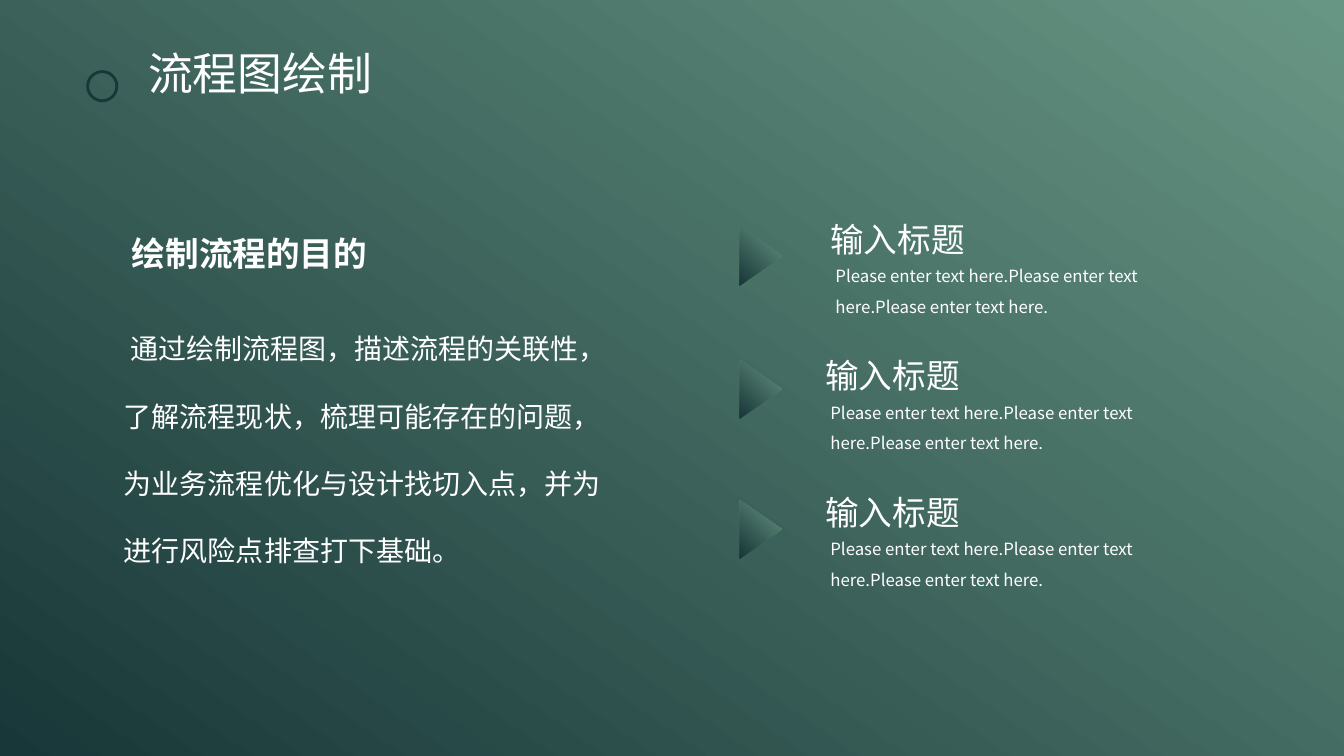
import pptx
import pptx.dml.color
import pptx.enum.shapes
import pptx.enum.text
import pptx.oxml
import pptx.oxml.ns
import pptx.util

SLIDE_WIDTH = pptx.util.Inches(13.33)
SLIDE_HEIGHT = pptx.util.Inches(7.5)
COLUMN = SLIDE_WIDTH / 160
ROW = SLIDE_HEIGHT / 90

WHITE = pptx.dml.color.RGBColor(0xFF, 0xFF, 0xFF)
SAGE = pptx.dml.color.RGBColor(0x68, 0x96, 0x84)
DEEP_GREEN = pptx.dml.color.RGBColor(0x18, 0x37, 0x38)
FONT = "Noto Sans CJK SC"

PURPOSE = (" 通过绘制流程图，描述流程的关联性，了解流程现状，梳理可能存在的问题，"
           "为业务流程优化与设计找切入点，并为进行风险点排查打下基础。")
ITEM_TITLE = "输入标题"
ITEM_TEXT = "Please enter text here." * 3
ITEM_TOP = 25.44
ITEM_PITCH = 16.26
# Left column of each item and top row of its arrow
ITEMS = [(97.68, 27.96), (97.08, 43.8), (97.08, 60.48)]


def grid_box(column, row, columns, rows):
    return (round(column * COLUMN), round(row * ROW),
            round(columns * COLUMN), round(rows * ROW))


def fill_gradient(fill, angle):
    """Run sage into deep green; the angle is counter-clockwise."""
    fill.gradient()
    fill.gradient_angle = angle
    for stop, colour in zip(fill.gradient_stops, (SAGE, DEEP_GREEN)):
        stop.color.rgb = colour


def add_text(slide, box, wording, size, spacing=1.0, bold=False):
    frame = slide.shapes.add_textbox(*grid_box(*box)).text_frame
    frame.word_wrap = True
    frame.auto_size = pptx.enum.text.MSO_AUTO_SIZE.SHAPE_TO_FIT_TEXT
    frame.text = wording
    paragraph = frame.paragraphs[0]
    paragraph.line_spacing = spacing
    font = paragraph.runs[0].font
    font.name = FONT
    font.size = pptx.util.Pt(size)
    font.bold = bold
    font.color.rgb = WHITE
    east_asian = pptx.oxml.parse_xml(
        f'<a:ea {pptx.oxml.ns.nsdecls("a")} typeface="{FONT}"/>')
    paragraph.runs[0]._r.rPr.find(pptx.oxml.ns.qn("a:latin")).addnext(east_asian)


def add_ring(slide, box):
    ring = slide.shapes.add_shape(
        pptx.enum.shapes.MSO_SHAPE.OVAL, *grid_box(*box))
    ring.shadow.inherit = False
    ring.fill.background()
    ring.line.color.rgb = DEEP_GREEN
    ring.line.width = pptx.util.Pt(2)


def add_arrow(slide, box):
    arrow = slide.shapes.add_shape(
        pptx.enum.shapes.MSO_SHAPE.ISOSCELES_TRIANGLE, *grid_box(*box))
    arrow.rotation = 90
    arrow.shadow.inherit = False
    fill_gradient(arrow.fill, 315)
    arrow.line.fill.background()


def add_item(slide, column, row, arrow_row):
    add_arrow(slide, (87.12, arrow_row, 6.96, 5.04))
    add_text(slide, (column + 0.6, row + 4.44, 47.16, 8.04), ITEM_TEXT, 12, 1.5)
    add_text(slide, (column, row, 26.88, 6), ITEM_TITLE, 24)


def main():
    deck = pptx.Presentation()
    deck.slide_width = SLIDE_WIDTH
    deck.slide_height = SLIDE_HEIGHT
    slide = deck.slides.add_slide(deck.slide_layouts[6])
    fill_gradient(slide.background.fill, 235)

    add_text(slide, (16.44, 4.8, 41.4, 7.68), "流程图绘制", 32)
    add_ring(slide, (10.44, 8.52, 3.48, 3.48))
    add_text(slide, (13.56, 34.92, 59.4, 33.48), PURPOSE, 20, 2.0)
    add_text(slide, (14.52, 24.72, 37.08, 7.68), "绘制流程的目的", 24, 1.5, True)
    for index, (column, arrow_row) in enumerate(ITEMS):
        add_item(slide, column, ITEM_TOP + index * ITEM_PITCH, arrow_row)

    deck.save("out.pptx")


if __name__ == "__main__":
    main()
